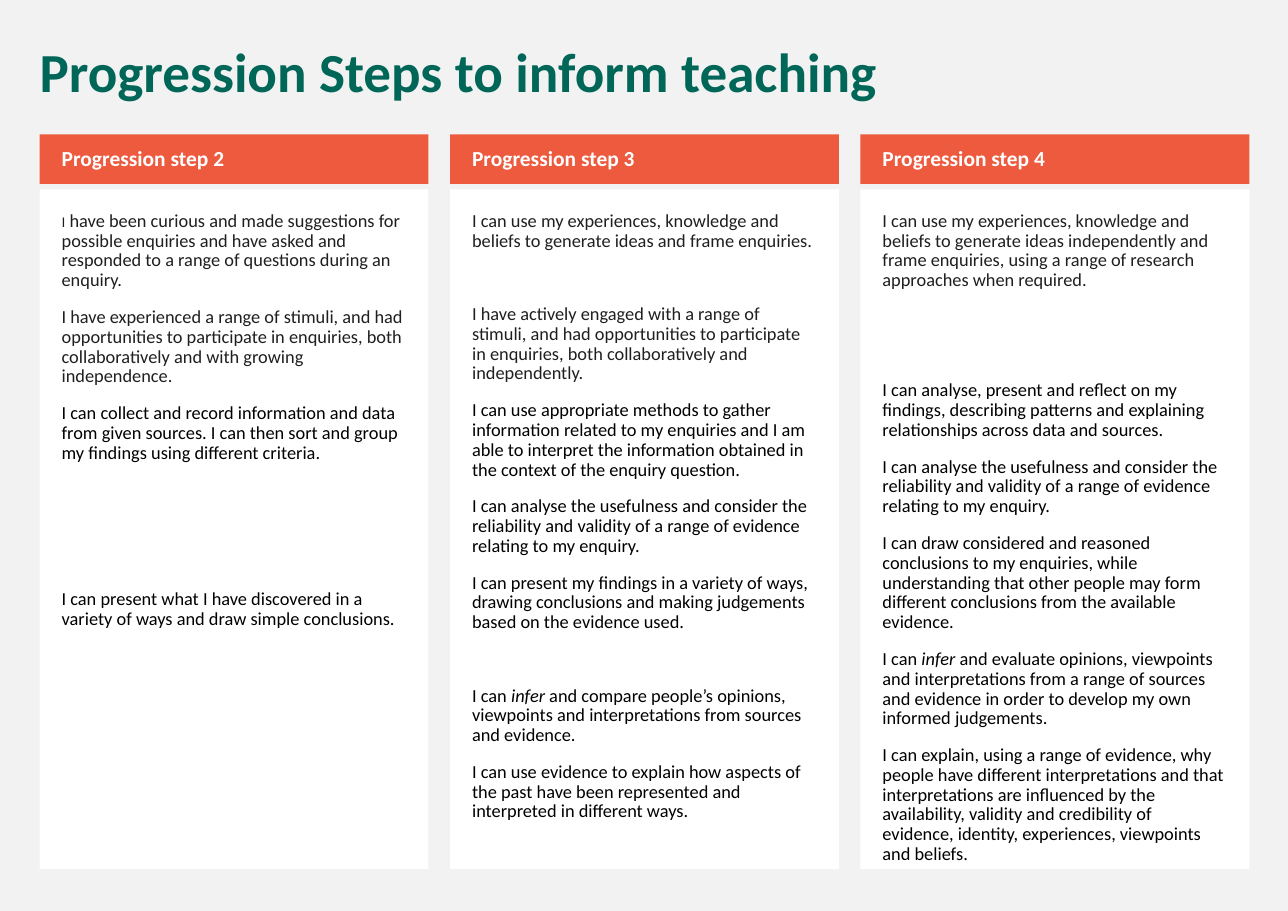
"""Build the slide that sets three progression steps side by side."""
from dataclasses import dataclass, replace

from pptx import Presentation
from pptx import util as u
from pptx.dml import color
from pptx.enum import shapes, text


@dataclass(frozen=True)
class Style:
    """Look of one run of text."""
    size: int
    colour: str
    font: str = "Calibri"
    bold: bool = False
    italic: bool = False


@dataclass(frozen=True)
class Theme:
    """Colours, type styles and paragraph spacing of the slide."""
    background: str = "F2F2F2"
    banner: str = "ED5A3E"
    panel: str = "FFFFFF"
    title: Style = Style(36, "006758", bold=True)
    heading: Style = Style(14, "FFFFFF", bold=True)
    body: Style = Style(12, "000000")
    soft: Style = Style(12, "1F1F1F")
    initial: Style = Style(9, "1F1F1F", font="Arial")
    emphasis: Style = replace(body, italic=True)
    line_spacing: float = 0.9
    space_before: int = 11
    skipped_row: int = 24


THEME = Theme()
LEFT, LAST_LEFT, WIDTH = 0.36, 7.81, 3.53


@dataclass(frozen=True)
class Statement:
    """Runs of one paragraph and the number of rows skipped above it."""
    runs: tuple
    skip: int = 0


def soft(words, skip=0):
    """Return a statement in dark grey."""
    return Statement(((words, THEME.soft),), skip)


def body(words, skip=0):
    """Return a statement in black."""
    return Statement(((words, THEME.body),), skip)


def infer(words, skip=0):
    """Return a black statement that opens with the stressed verb."""
    return Statement((("I can ", THEME.body), ("infer", THEME.emphasis), (words, THEME.body)), skip)


USEFULNESS = body("I can analyse the usefulness and consider the reliability and validity "
                  "of a range of evidence relating to my enquiry.")

STEPS = {
    "Progression step 2": [
        Statement((("I", THEME.initial),
                   (" have been curious and made suggestions for possible enquiries and have "
                    "asked and responded to a range of questions during an enquiry.", THEME.soft))),
        soft("I have experienced a range of stimuli, and had opportunities to participate in "
             "enquiries, both collaboratively and with growing independence."),
        body("I can collect and record information and data from given sources. I can then sort "
             "and group my findings using different criteria."),
        body("I can present what I have discovered in a variety of ways and draw simple "
             "conclusions.", skip=3),
    ],
    "Progression step 3": [
        soft("I can use my experiences, knowledge and beliefs to generate ideas and frame "
             "enquiries."),
        soft("I have actively engaged with a range of stimuli, and had opportunities to "
             "participate in enquiries, both collaboratively and independently.", skip=1),
        body("I can use appropriate methods to gather information related to my enquiries and I "
             "am able to interpret the information obtained in the context of the enquiry "
             "question."),
        USEFULNESS,
        body("I can present my findings in a variety of ways, drawing conclusions and making "
             "judgements based on the evidence used."),
        infer(" and compare people’s opinions, viewpoints and interpretations from sources and "
              "evidence.", skip=1),
        body("I can use evidence to explain how aspects of the past have been represented and "
             "interpreted in different ways."),
    ],
    "Progression step 4": [
        soft("I can use my experiences, knowledge and beliefs to generate ideas independently "
             "and frame enquiries, using a range of research approaches when required."),
        body("I can analyse, present and reflect on my findings, describing patterns and "
             "explaining relationships across data and sources.", skip=2),
        USEFULNESS,
        body("I can draw considered and reasoned conclusions to my enquiries, while "
             "understanding that other people may form different conclusions from the available "
             "evidence."),
        infer(" and evaluate opinions, viewpoints and interpretations from a range of sources "
              "and evidence in order to develop my own informed judgements."),
        body("I can explain, using a range of evidence, why people have different "
             "interpretations and that interpretations are influenced by the availability, "
             "validity and credibility of evidence, identity, experiences, viewpoints and "
             "beliefs."),
    ],
}


def paint(fill, colour):
    """Give a fill one solid colour."""
    fill.solid()
    fill.fore_color.rgb = color.RGBColor.from_string(colour)


def add_run(paragraph, words, style):
    """Add one styled run to a paragraph."""
    run = paragraph.add_run()
    run.text = words
    font = run.font
    font.name, font.size = style.font, u.Pt(style.size)
    font.bold, font.italic = style.bold, style.italic
    font.color.rgb = color.RGBColor.from_string(style.colour)


def write(frame, statements, anchor, insets):
    """Fill a text frame with left-aligned statements."""
    frame.word_wrap = True
    frame.auto_size = text.MSO_AUTO_SIZE.NONE
    frame.vertical_anchor = anchor
    (frame.margin_left, frame.margin_top,
     frame.margin_right, frame.margin_bottom) = map(u.Inches, insets)
    for index, statement in enumerate(statements):
        paragraph = frame.add_paragraph() if index else frame.paragraphs[0]
        paragraph.alignment = text.PP_ALIGN.LEFT
        paragraph.line_spacing = THEME.line_spacing
        paragraph.space_before = u.Pt(THEME.space_before + statement.skip * THEME.skipped_row)
        for words, style in statement.runs:
            add_run(paragraph, words, style)


def add_box(slide, left, top, height, colour):
    """Add a plain rectangle of column width and return its text frame."""
    shape = slide.shapes.add_shape(shapes.MSO_SHAPE.RECTANGLE, u.Inches(left), u.Inches(top),
                                   u.Inches(WIDTH), u.Inches(height))
    shape.shadow.inherit = False
    shape.line.fill.background()
    paint(shape.fill, colour)
    return shape.text_frame


def add_step(slide, left, heading, statements):
    """Add one column: a coloured heading above a white panel."""
    panel = add_box(slide, left, 1.72, 6.17, THEME.panel)
    write(panel, statements, text.MSO_ANCHOR.TOP, (0.2, 0.2, 0.2, 0.2))
    banner = add_box(slide, left, 1.22, 0.45, THEME.banner)
    write(banner, [Statement(((heading, THEME.heading),))], text.MSO_ANCHOR.MIDDLE,
          (0.2, 0.05, 0.1, 0.05))


def set_title(slide, words):
    """Place and fill the title placeholder."""
    title = slide.shapes.title
    title.left, title.top = u.Inches(0.26), u.Inches(0.36)
    title.width, title.height = u.Inches(11.08), u.Inches(0.65)
    write(title.text_frame, [Statement(((words, THEME.title),))], text.MSO_ANCHOR.TOP,
          (0.1, 0.05, 0.1, 0.05))


def main():
    """Build and save the presentation."""
    presentation = Presentation()
    presentation.slide_width, presentation.slide_height = u.Inches(11.69), u.Inches(8.27)
    slide = presentation.slides.add_slide(presentation.slide_layouts.get_by_name("Title Only"))
    paint(slide.background.fill, THEME.background)
    set_title(slide, "Progression Steps to inform teaching")
    pitch = (LAST_LEFT - LEFT) / (len(STEPS) - 1)
    for column, (heading, statements) in enumerate(STEPS.items()):
        add_step(slide, LEFT + column * pitch, heading, statements)
    presentation.save("out.pptx")


if __name__ == "__main__":
    main()
